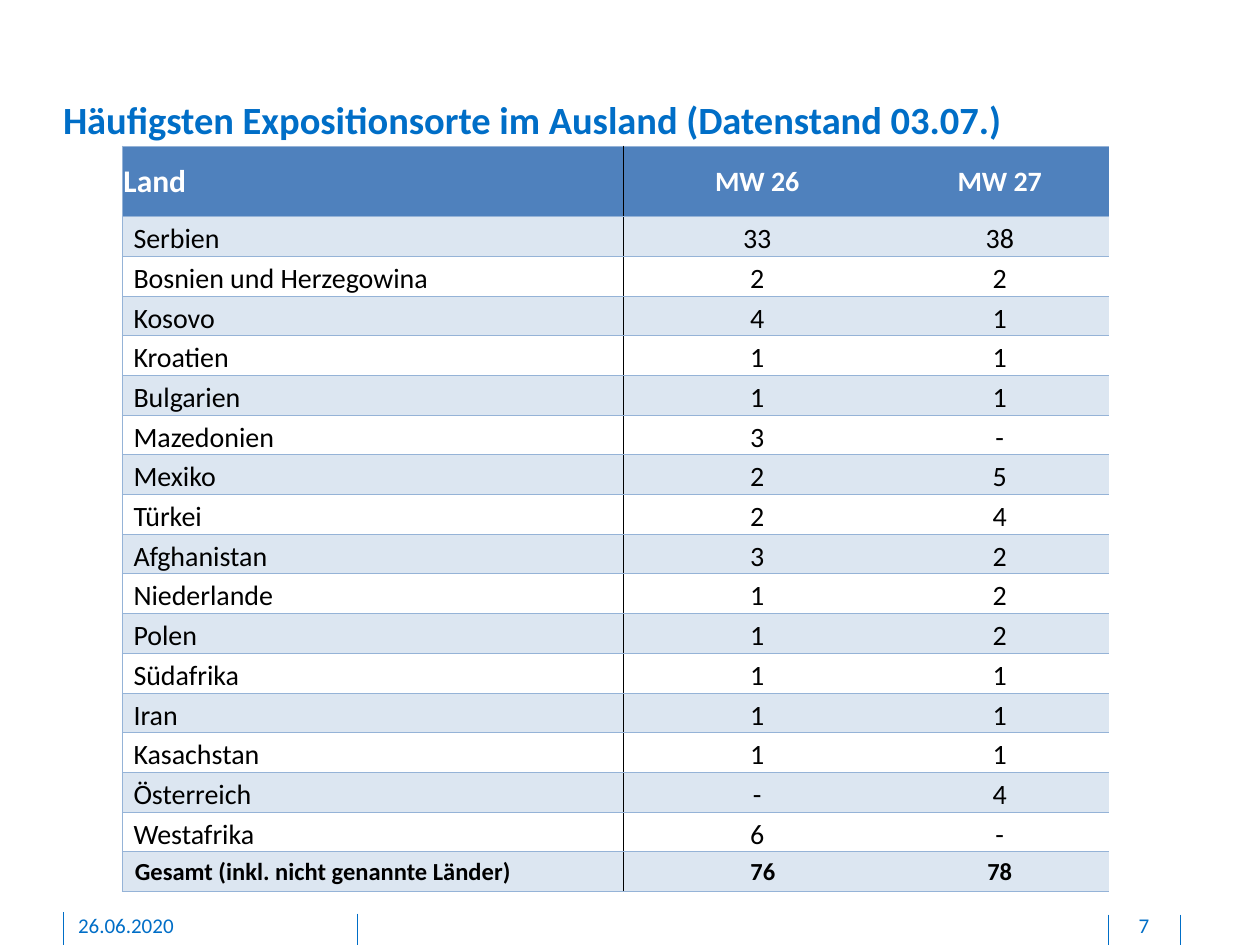
"""Build the slide listing the most frequent places of exposure abroad."""
from dataclasses import dataclass

from lxml.etree import SubElement
from pptx import Presentation
from pptx.dml.color import RGBColor
from pptx.enum.shapes import MSO_CONNECTOR
from pptx.enum.text import MSO_ANCHOR, PP_ALIGN
from pptx.oxml.ns import qn
from pptx.util import Inches, Pt


@dataclass(frozen=True)
class Theme:
    font: str = "Calibri"
    blue: str = "006EC7"
    head: str = "4F81BD"
    band: str = "DCE6F1"
    white: str = "FFFFFF"
    black: str = "000000"
    rule: str = "95B3D7"
    thin: float = 0.5
    title: int = 22
    label: int = 18
    body: int = 16
    total: int = 14
    foot: int = 12


theme = Theme()


def style(para, size, color, bold=False, align=PP_ALIGN.LEFT):
    para.alignment = align
    font = para.font
    font.name, font.size, font.bold = theme.font, Pt(size), bold
    font.color.rgb = RGBColor.from_string(color)


def border(cell, side, color):
    props = cell._tc.get_or_add_tcPr()
    line = SubElement(props, qn(f"a:ln{side}"), w=str(Pt(theme.thin)))
    if color:
        fill = SubElement(line, qn("a:solidFill"))
        SubElement(fill, qn("a:srgbClr"), val=color)
    else:
        SubElement(line, qn("a:noFill"))


deck = Presentation()
deck.slide_width, deck.slide_height = Inches(10), Inches(7.5)
slide = deck.slides.add_slide(deck.slide_layouts[5])
shapes = slide.shapes

for x, top in ((2.84, 7.25), (0.5, 7.24), (9.37, 7.26), (8.8, 7.26)):
    line = shapes.add_connector(
        MSO_CONNECTOR.STRAIGHT, Inches(x), Inches(top), Inches(x), Inches(7.5))
    line.line.color.rgb = RGBColor.from_string(theme.blue)
    line.line.width = Pt(theme.thin)
    SubElement(line._element.spPr, qn("a:effectLst"))

title = shapes.title
title.left, title.top = Inches(0.5), Inches(0.76)
title.width, title.height = Inches(8.85), Inches(0.37)
frame = title.text_frame
frame.margin_left = frame.margin_right = frame.margin_top = frame.margin_bottom = 0
frame.vertical_anchor = MSO_ANCHOR.MIDDLE
frame.text = "Häufigsten Expositionsorte im Ausland (Datenstand 03.07.)"
style(frame.paragraphs[0], theme.title, theme.blue, True)

for text, left, width, align in (
    ("26.06.2020", 0.62, 2.03, PP_ALIGN.LEFT),
    ("7", 8.81, 0.54, PP_ALIGN.CENTER),
):
    box = shapes.add_textbox(Inches(left), Inches(7.24), Inches(width), Inches(0.21))
    frame = box.text_frame
    frame.word_wrap = True
    frame.margin_left = frame.margin_right = frame.margin_top = 0
    frame.margin_bottom = Inches(0.05)
    frame.text = text
    style(frame.paragraphs[0], theme.foot, theme.blue, align=align)

rows = (
    ("Land", "MW 26", "MW 27"),
    ("Serbien", "33", "38"),
    ("Bosnien und Herzegowina", "2", "2"),
    ("Kosovo", "4", "1"),
    ("Kroatien", "1", "1"),
    ("Bulgarien", "1", "1"),
    ("Mazedonien", "3", "-"),
    ("Mexiko", "2", "5"),
    ("Türkei", "2", "4"),
    ("Afghanistan", "3", "2"),
    ("Niederlande", "1", "2"),
    ("Polen", "1", "2"),
    ("Südafrika", "1", "1"),
    ("Iran", "1", "1"),
    ("Kasachstan", "1", "1"),
    ("Österreich", "-", "4"),
    ("Westafrika", "6", "-"),
    ("Gesamt (inkl. nicht genannte Länder)", "76", "78"),
)
widths = (3.98, 2.12, 1.73)
height, first = 5.92, 0.56
last = len(rows) - 1
table = shapes.add_table(
    len(rows), len(widths), Inches(0.97), Inches(1.16),
    Inches(sum(widths)), Inches(height)).table
table.horz_banding = False
for col, width in zip(table.columns, widths):
    col.width = Inches(width)

sides = ((theme.rule, theme.black), (theme.black, None), (None, None))
for r, row in enumerate(rows):
    table.rows[r].height = Inches(first if r == 0 else (height - first) / last)
    for c, text in enumerate(row):
        cell = table.cell(r, c)
        size, color, bold = theme.body, theme.black, r in (0, last)
        fill = theme.band if r % 2 else theme.white
        indent = 0.09 if c == 0 else 0.01
        if r == 0:
            size = theme.body if c else theme.label
            color, fill, indent = theme.white, theme.head, 0.01
        elif r == last:
            size, indent = theme.total, 0.01 if c == 2 else 0.1
        cell.margin_left = Inches(indent)
        cell.margin_right = cell.margin_top = Inches(0.01)
        cell.margin_bottom = 0
        cell.vertical_anchor = MSO_ANCHOR.MIDDLE if bold else MSO_ANCHOR.BOTTOM
        for side, tint in zip("LRTB", (*sides[c], theme.rule, theme.rule)):
            border(cell, side, tint)
        cell.fill.solid()
        cell.fill.fore_color.rgb = RGBColor.from_string(fill)
        cell.text = text
        align = PP_ALIGN.CENTER if c else PP_ALIGN.LEFT
        style(cell.text_frame.paragraphs[0], size, color, bold, align)

deck.save("out.pptx")
